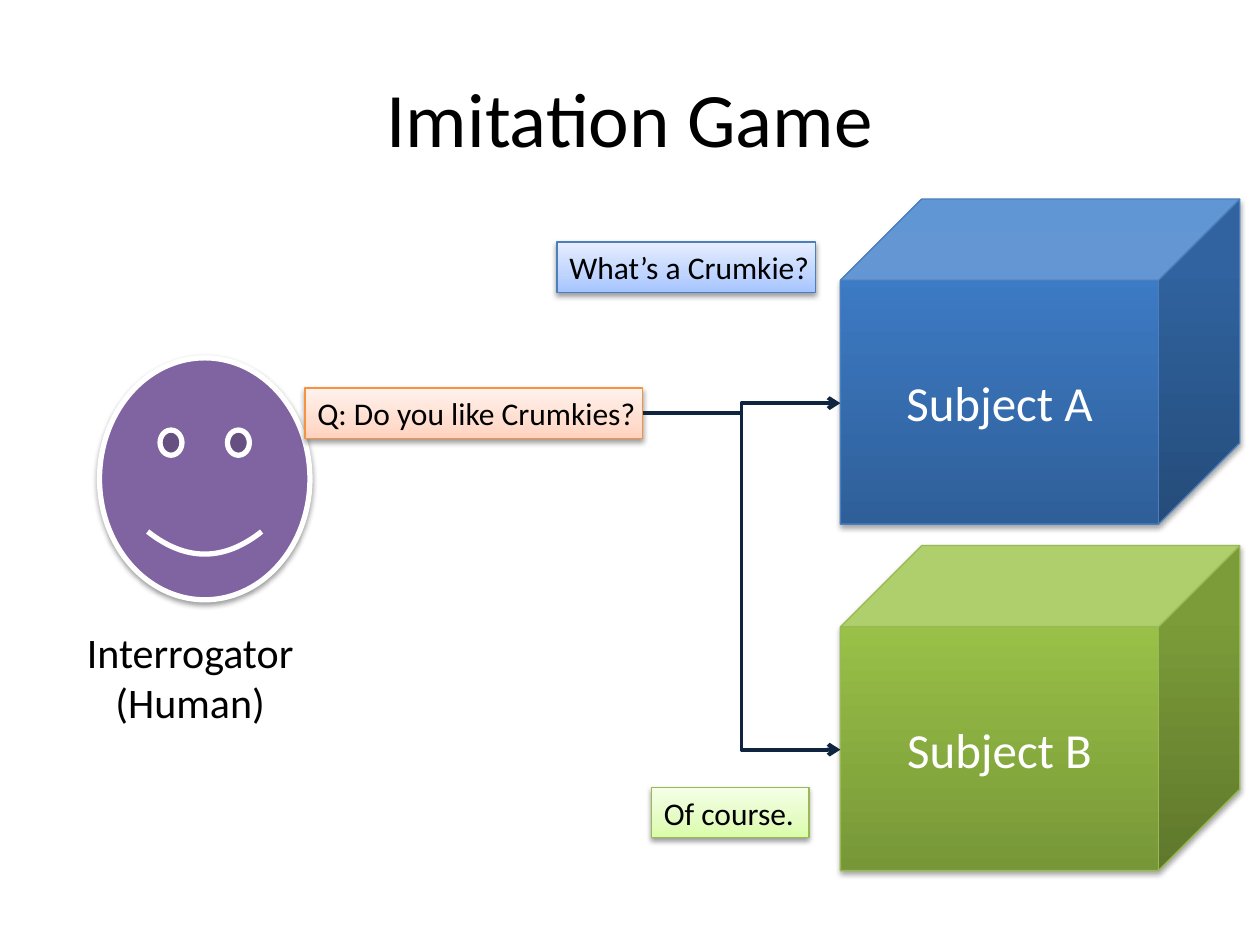
from dataclasses import dataclass
from typing import Optional

from lxml import etree
from pptx import Presentation
from pptx import util as u
from pptx.dml.color import RGBColor
from pptx.enum import shapes, text
from pptx.oxml.ns import qn

FONT = "Calibri"
BLACK, WHITE, NAVY, PURPLE = "000000", "FFFFFF", "0F243E", "8064A2"


@dataclass
class Box:
    left: float
    top: float
    width: float
    height: float

    def lengths(self) -> list:
        return [u.Inches(v) for v in (self.left, self.top, self.width, self.height)]


@dataclass
class Block:
    preset: shapes.MSO_SHAPE
    box: Box
    stops: list
    outline: str
    words: str
    size: int
    color: str
    align: text.PP_ALIGN
    anchor: text.MSO_ANCHOR
    wrap: bool
    shadow_percent: int
    shadow_distance: float


def rgb(value: str) -> RGBColor:
    return RGBColor.from_string(value)


def child(parent, tag: str, **attributes):
    return etree.SubElement(parent, qn(tag), attributes)


def apply(target, formats: dict) -> None:
    for name, value in formats.items():
        setattr(target, name, value)


def write(frame, words: str, size: int, color: str, align, formats: dict) -> None:
    apply(frame, formats)
    frame.text = words
    for paragraph in frame.paragraphs:
        paragraph.alignment = align
        apply(paragraph.font, {"name": FONT, "size": u.Pt(size)})
        paragraph.font.color.rgb = rgb(color)
        for run in paragraph.runs:
            apply(run.font, {"name": FONT, "size": u.Pt(size)})
            run.font.color.rgb = rgb(color)


def outline(line, color: str, width: float) -> None:
    line.color.rgb = rgb(color)
    line.width = u.Pt(width)


def cast_shadow(shape, percent: int, distance: float) -> None:
    shape.shadow.inherit = False
    effects = shape._element.spPr.find(qn("a:effectLst"))
    shadow = child(effects, "a:outerShdw", blurRad=str(u.Pt(3.1)),
                   dist=str(u.Pt(distance)), dir="5400000", rotWithShape="0")
    shade = child(shadow, "a:srgbClr", val=BLACK)
    child(shade, "a:alpha", val=str(percent * 1000))


def fill_gradient(shape, stops: list) -> None:
    shape.fill.gradient()
    shape.fill.gradient_angle = 90
    stop_list = shape._element.spPr.find(qn("a:gradFill")).find(qn("a:gsLst"))
    for old in list(stop_list):
        stop_list.remove(old)
    for position, color in stops:
        stop = child(stop_list, "a:gs", pos=str(position * 1000))
        child(stop, "a:srgbClr", val=color)


def draw_block(slide, block: Block):
    shape = slide.shapes.add_shape(block.preset, *block.box.lengths())
    fill_gradient(shape, block.stops)
    outline(shape.line, block.outline, 0.75)
    cast_shadow(shape, block.shadow_percent, block.shadow_distance)
    write(shape.text_frame, block.words, block.size, block.color, block.align,
          {"word_wrap": block.wrap, "vertical_anchor": block.anchor})
    return shape


def subject(top: float, words: str, stops: list, edge: str) -> Block:
    return Block(shapes.MSO_SHAPE.CUBE, Box(6.67, top, 3.17, 2.58), stops, edge, words, 28,
                 WHITE, text.PP_ALIGN.CENTER, text.MSO_ANCHOR.MIDDLE, True, 35, 1.8)


def speech(box: Box, words: str, colors: list, edge: str) -> Block:
    return Block(shapes.MSO_SHAPE.RECTANGLE, box, list(zip((0, 35, 100), colors)), edge, words, 18,
                 BLACK, text.PP_ALIGN.LEFT, text.MSO_ANCHOR.TOP, False, 38, 1.6)


def draw_arrow(slide, source, end_x: float, end_y: float, start: Optional[tuple] = None) -> None:
    begin_x, begin_y = start or (source.left + source.width, source.top + source.height // 2)
    arrow = slide.shapes.add_connector(shapes.MSO_CONNECTOR.ELBOW, begin_x, begin_y,
                                       u.Inches(end_x), u.Inches(end_y))
    arrow.begin_connect(source, 3)
    outline(arrow.line, NAVY, 2.25)
    child(arrow.line._get_or_add_ln(), "a:tailEnd", type="arrow")
    child(arrow._element.spPr, "a:effectLst")


def main() -> None:
    deck = Presentation()
    apply(deck, {"slide_width": u.Inches(10), "slide_height": u.Inches(7.5)})
    slide = deck.slides.add_slide(deck.slide_layouts[5])

    title = slide.shapes.title
    apply(title, dict(zip(("left", "top", "width", "height"), Box(0.5, 0.3, 9, 1.25).lengths())))
    write(title.text_frame, "Imitation Game", 44, BLACK, text.PP_ALIGN.CENTER,
          {"vertical_anchor": text.MSO_ANCHOR.MIDDLE})

    caption = slide.shapes.add_textbox(*Box(0.58, 4.92, 1.86, 0.91).lengths())
    write(caption.text_frame, "Interrogator\n(Human)", 24, BLACK, text.PP_ALIGN.CENTER,
          {"word_wrap": False, "auto_size": text.MSO_AUTO_SIZE.SHAPE_TO_FIT_TEXT})

    interrogator = slide.shapes.add_shape(shapes.MSO_SHAPE.SMILEY_FACE,
                                          *Box(0.79, 2.84, 1.67, 1.92).lengths())
    interrogator.fill.solid()
    interrogator.fill.fore_color.rgb = rgb(PURPLE)
    outline(interrogator.line, WHITE, 3)
    cast_shadow(interrogator, 38, 1.6)

    subjects = [
        subject(1.58, "Subject A", [(0, "2F5F99"), (80, "3D7CC7"), (100, "3A7CCB")], "4B7EBC"),
        subject(4.33, "Subject B", [(0, "779737"), (80, "9BC348"), (100, "9DC746")], "98B955"),
    ]
    for block in subjects:
        draw_block(slide, block)

    question = draw_block(slide, speech(Box(2.42, 3.08, 2.68, 0.4), "Q: Do you like Crumkies?",
                                        ["FFD2BD", "FFDED0", "FFF2ED"], "F69240"))
    for block in subjects:
        draw_arrow(slide, question, block.box.left, block.box.top + 1.62)

    answers = [
        speech(Box(5.17, 6.25, 1.25, 0.4), "Of course.", ["DAFDA7", "E4FCC2", "F5FFE7"], "98B955"),
        speech(Box(4.42, 1.92, 2.05, 0.4), "What’s a Crumkie?", ["A4C4FF", "BFD4FF", "E6EEFF"], "4B7EBC"),
    ]
    for block in answers:
        draw_block(slide, block)

    deck.save("out.pptx")


if __name__ == "__main__":
    main()
